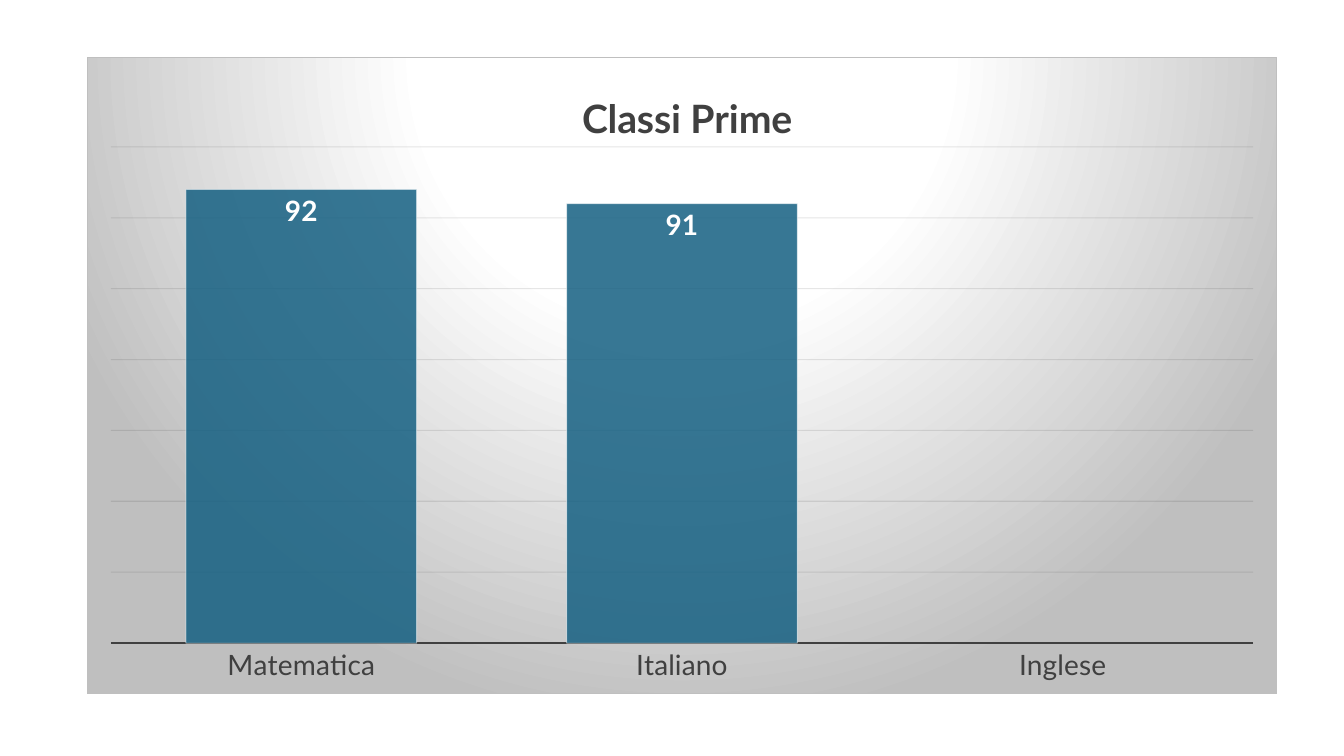
from dataclasses import dataclass

import pptx
import pptx.chart.data
import pptx.dml.color
import pptx.enum.chart
import pptx.oxml
import pptx.oxml.ns
import pptx.util
from pptx.util import Inches


@dataclass(frozen=True)
class Theme:
    font: str = "Lato"
    text: str = "404040"
    bar: str = "156082"
    white: str = "FFFFFF"
    grid: str = "0D0D0D"
    edge: str = "BFBFBF"
    title_size: int = 28
    label_size: int = 20


THEME = Theme()
NAMESPACES = pptx.oxml.ns.nsdecls("a", "c")


def style_font(font, size, color, bold=False):
    font.name = THEME.font
    font.size = pptx.util.Pt(size)
    font.bold = bold
    font.color.rgb = pptx.dml.color.RGBColor.from_string(color)


def style_line(line, color, width):
    line.color.rgb = pptx.dml.color.RGBColor.from_string(color)
    line.width = pptx.util.Pt(width)


presentation = pptx.Presentation()
presentation.slide_width = Inches(13.33)
presentation.slide_height = Inches(7.5)
slide = presentation.slides.add_slide(presentation.slide_layouts[6])

results = pptx.chart.data.CategoryChartData(number_format="0")
results.categories = ["Matematica", "Italiano", "Inglese"]
results.add_series("Series 1", [92, 91, None])
chart = slide.shapes.add_chart(
    pptx.enum.chart.XL_CHART_TYPE.COLUMN_CLUSTERED,
    Inches(0.86), Inches(0.57), Inches(11.81), Inches(6.32), results,
).chart
chart.has_legend = False
style_font(chart.font, 10, "000000")

# Title
chart.has_title = True
heading = chart.chart_title.text_frame
heading.text = "Classi Prime"
style_font(heading.paragraphs[0].runs[0].font, THEME.title_size, THEME.text, bold=True)
chart.chart_title.include_in_layout = False

# Axes
subjects = chart.category_axis
subjects.major_tick_mark = pptx.enum.chart.XL_TICK_MARK.NONE
style_font(subjects.tick_labels.font, THEME.label_size, THEME.text)
style_line(subjects.format.line, THEME.text, 1.5)

scores = chart.value_axis
scores.visible = False
scores.minimum_scale = 60
scores.maximum_scale = 95
scores.major_unit = 5
scores.has_major_gridlines = True
style_line(scores.major_gridlines.format.line, THEME.grid, 0.75)

# Columns and their labels
columns = chart.plots[0]
columns.gap_width = 65
columns.vary_by_categories = False
series = columns.series[0]
series.format.fill.solid()
series.format.fill.fore_color.rgb = pptx.dml.color.RGBColor.from_string(THEME.bar)
style_line(series.format.line, THEME.white, 0.75)
labels = series.data_labels
labels.show_value = True
labels.number_format = "0"
labels.number_format_is_linked = False
labels.position = pptx.enum.chart.XL_LABEL_POSITION.INSIDE_END
style_font(labels.font, THEME.label_size, THEME.white, bold=True)

# Opacity in percent, for each colour in the order it stands in the part
chart_xml = chart.element
for query, opacities in (
    (".//c:ser/c:spPr//a:srgbClr", (85, 50)),
    (".//c:majorGridlines//a:srgbClr", (10,)),
):
    for color, opacity in zip(chart_xml.xpath(query), opacities):
        color.append(pptx.oxml.parse_xml(f'<a:alpha {NAMESPACES} val="{opacity * 1000}"/>'))

# Fixed places of the title and the plot, as fractions of the chart
for query, index, target, place in (
    (".//c:chart/c:title", 1, "", {"x": 0.41, "y": 0.04}),
    (".//c:plotArea", 0, '<c:layoutTarget val="inner"/>',
     {"x": 0.02, "y": 0.14, "w": 0.96, "h": 0.78}),
):
    part = chart_xml.xpath(query)[0]
    for automatic in part.xpath("./c:layout"):
        part.remove(automatic)
    modes = "".join(f'<c:{key}Mode val="edge"/>' for key in "xy")
    sizes = "".join(f'<c:{key} val="{value}"/>' for key, value in place.items())
    part.insert(index, pptx.oxml.parse_xml(
        f"<c:layout {NAMESPACES}><c:manualLayout>{target}{modes}{sizes}"
        "</c:manualLayout></c:layout>"))

# Radial background and border
stops = "".join(
    f'<a:gs pos="{percent * 1000}"><a:srgbClr val="{color}"/></a:gs>'
    for percent, color in ((0, THEME.white), (39, THEME.white), (100, THEME.edge)))
chart_xml.xpath("./c:chart")[0].addnext(pptx.oxml.parse_xml(
    f"<c:spPr {NAMESPACES}><a:gradFill><a:gsLst>{stops}</a:gsLst>"
    '<a:path path="circle"><a:fillToRect l="50000" t="-80000" r="50000" b="180000"/></a:path>'
    f'</a:gradFill><a:ln w="{pptx.util.Pt(0.75)}"><a:solidFill><a:srgbClr val="{THEME.edge}"/>'
    "</a:solidFill></a:ln></c:spPr>"))

presentation.save("out.pptx")
